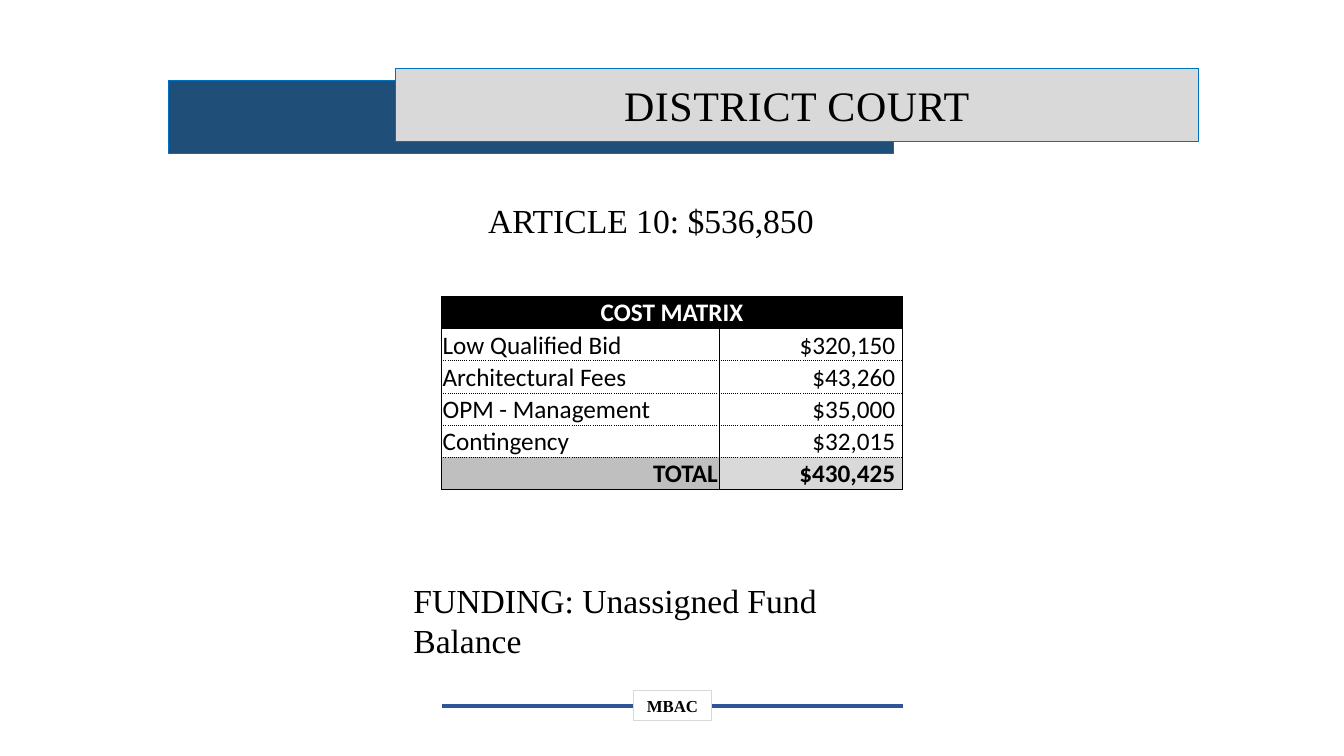
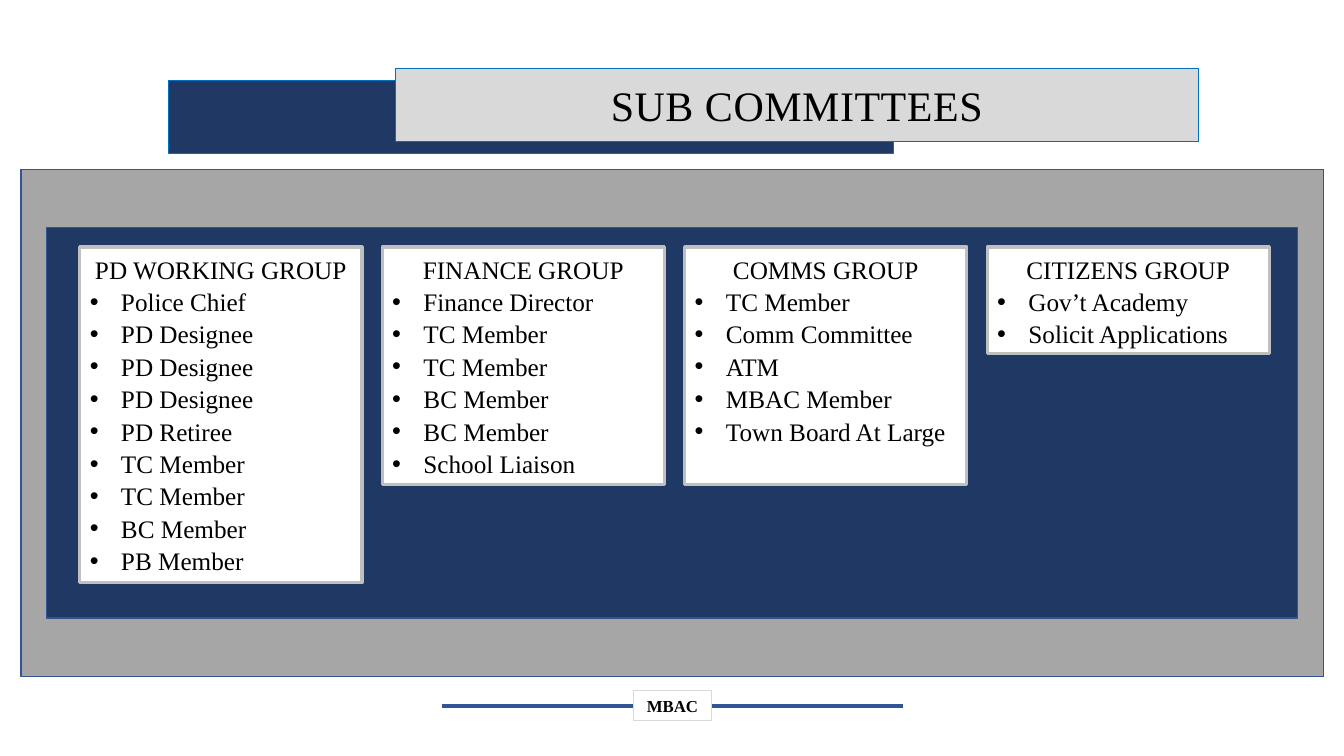
import lxml.etree
import pptx
import pptx.dml.color
import pptx.enum.dml
import pptx.enum.shapes
import pptx.enum.text
import pptx.oxml.ns
import pptx.util

Inches, Pt = pptx.util.Inches, pptx.util.Pt
RGB = pptx.dml.color.RGBColor.from_string
ALIGN = pptx.enum.text.PP_ALIGN
ANCHOR = pptx.enum.text.MSO_ANCHOR
RECTANGLE = pptx.enum.shapes.MSO_SHAPE.RECTANGLE
qn = pptx.oxml.ns.qn


class Theme:
    black, white = "000000", "FFFFFF"
    light_gray, mid_gray, panel_gray = "D9D9D9", "BFBFBF", "A6A6A6"
    steel, navy = "1F4E79", "203864"
    band_line, panel_line, rule = "0070C0", "325491", "2F5597"
    title = {"name": "Times New Roman", "size": Pt(30), "bold": False}
    statement = {"name": "Times New Roman", "size": Pt(24), "bold": False}
    group = {"name": "Times New Roman", "size": Pt(18), "bold": False}
    badge = {"name": "Times New Roman", "size": Pt(12), "bold": True}
    cell = {"name": "Calibri", "size": Pt(18), "bold": False}
    cell_strong = {"name": "Calibri", "size": Pt(18), "bold": True}


def place(shape, at, fill=None, line=None, width=0.75):
    """Put the shape in front of the others at the given inches and paint it."""
    shape.element.getparent().append(shape.element)
    for side, inches in zip(("left", "top", "width", "height"), at):
        setattr(shape, side, Inches(inches))
    shape.shadow.inherit = False
    if fill:
        shape.fill.solid()
        shape.fill.fore_color.rgb = RGB(fill)
        shape.line.color.rgb = RGB(line)
        shape.line.width = Pt(width)
    return shape


def write(frame, lines, font, align=ALIGN.LEFT, color=Theme.black,
          anchor=ANCHOR.TOP, spacing=1.0, bullets=False):
    """Fill the frame; with bullets, every line after the first is a list item."""
    frame.word_wrap = True
    frame.auto_size = pptx.enum.text.MSO_AUTO_SIZE.NONE
    frame.vertical_anchor = anchor
    for number, line in enumerate(lines):
        paragraph = frame.add_paragraph() if number else frame.paragraphs[0]
        is_item = bullets and number > 0
        properties = paragraph._p.get_or_add_pPr()
        indent = Inches(0.31) if is_item else 0
        properties.set("marL", str(indent))
        properties.set("indent", str(-indent))
        if is_item:
            lxml.etree.SubElement(properties, qn("a:buFont")).set("typeface", "Arial")
            lxml.etree.SubElement(properties, qn("a:buChar")).set("char", "•")
        else:
            lxml.etree.SubElement(properties, qn("a:buNone"))
        paragraph.alignment = ALIGN.LEFT if is_item else align
        paragraph.line_spacing = spacing
        paragraph.space_before = Pt(0)
        run = paragraph.add_run()
        run.text = line
        for name, value in font.items():
            setattr(run.font, name, value)
        run.font.color.rgb = RGB(color)


deck = pptx.Presentation()
deck.slide_width, deck.slide_height = Inches(13.33), Inches(7.5)
TWO_CONTENT, COMPARISON = deck.slide_layouts[3], deck.slide_layouts[4]

# Title bands and footer
slides = []
for heading, layout, band_color in (
    ("DISTRICT COURT", TWO_CONTENT, Theme.steel),
    ("SUB COMMITTEES", COMPARISON, Theme.navy),
):
    slide = deck.slides.add_slide(layout)
    slides.append(slide)
    band = slide.shapes.add_shape(RECTANGLE, 0, 0, 0, 0)
    place(band, (1.67, 0.8, 7.19, 0.72), band_color, Theme.band_line)
    title = place(slide.shapes.title, (3.92, 0.68, 7.97, 0.72),
                  Theme.light_gray, Theme.band_line)
    write(title.text_frame, [heading], Theme.title, ALIGN.CENTER, anchor=ANCHOR.MIDDLE)
    title.text_frame.paragraphs[0].runs[0]._r.get_or_add_rPr().set("spc", "40")

    rule = slide.shapes.add_connector(
        pptx.enum.shapes.MSO_CONNECTOR.STRAIGHT,
        Inches(4.38), Inches(7), Inches(8.96), Inches(7))
    rule.line.color.rgb = RGB(Theme.rule)
    rule.line.width = Pt(2.75)
    lxml.etree.SubElement(rule.element.spPr, qn("a:effectLst"))
    badge = slide.shapes.add_shape(RECTANGLE, 0, 0, 0, 0)
    place(badge, (6.28, 6.85, 0.78, 0.3), Theme.white, Theme.light_gray)
    write(badge.text_frame, ["MBAC"], Theme.badge, ALIGN.CENTER)

court, committees = slides

# District court: article, costs and funding
statements = (
    ("ARTICLE 10: $536,850", (4.74, 1.93, 3.86, 0.5)),
    ("FUNDING: Unassigned Fund Balance", (4, 5.7, 5.3, 0.9)),
)
for index, (statement, at) in enumerate(statements, start=1):
    place(court.placeholders[index], at)
    write(court.placeholders[index].text_frame, [statement], Theme.statement)

costs = (
    ("COST MATRIX", ""),
    ("Low Qualified Bid", "$320,150"),
    ("Architectural Fees", "$43,260"),
    ("OPM - Management", "$35,000"),
    ("Contingency", "$32,015"),
    ("TOTAL", "$430,425"),
)
last = len(costs) - 1
ROW_HEIGHT = 0.32
matrix = court.shapes.add_table(
    len(costs), 2, Inches(4.38), Inches(2.94),
    Inches(4.57), Inches(ROW_HEIGHT * len(costs))).table
matrix.first_row = matrix.horz_banding = False
for column, width in zip(matrix.columns, (2.75, 1.82)):
    column.width = Inches(width)
matrix.cell(0, 0).merge(matrix.cell(0, 1))

cell_margins = {"margin_left": 0.01, "margin_top": 0.01, "margin_bottom": 0}
for row, entries in enumerate(costs):
    for column, entry in enumerate(entries):
        cell = matrix.cell(row, column)
        for name, inches in cell_margins.items():
            setattr(cell, name, Inches(inches))
        cell.margin_right = Inches(0.07 if column else 0.01)
        cell.vertical_anchor = ANCHOR.BOTTOM

        borders = {"L": "solid", "R": "solid",
                   "T": "solid" if row == 0 else "sysDot",
                   "B": "solid" if row == last else "sysDot"}
        for side, dash in borders.items():
            border = lxml.etree.SubElement(
                cell._tc.get_or_add_tcPr(), qn("a:ln" + side), w=str(Pt(0.5)))
            ink = lxml.etree.SubElement(border, qn("a:solidFill"))
            lxml.etree.SubElement(ink, qn("a:srgbClr"), val=Theme.black)
            lxml.etree.SubElement(border, qn("a:prstDash"), val=dash)

        if row in (0, last):
            total_fill = Theme.light_gray if column else Theme.mid_gray
            cell.fill.solid()
            cell.fill.fore_color.rgb = RGB(total_fill if row else Theme.black)
        else:
            cell.fill.background()

        if entry:
            align = ALIGN.RIGHT if column or row == last else ALIGN.LEFT
            write(cell.text_frame, [entry],
                  Theme.cell_strong if row in (0, last) else Theme.cell,
                  align if row else ALIGN.CENTER,
                  Theme.black if row else Theme.white, ANCHOR.BOTTOM)

# Sub committees: one card per group on a framed panel
for at, fill in (
    ((0.21, 1.68, 12.92, 5.03), Theme.panel_gray),
    ((0.46, 2.26, 12.41, 3.87), Theme.navy),
):
    panel = committees.shapes.add_shape(RECTANGLE, 0, 0, 0, 0)
    place(panel, at, fill, Theme.panel_line, 1)

groups = (
    (3.33, ["PD WORKING GROUP", "Police Chief", "PD Designee", "PD Designee",
            "PD Designee", "PD Retiree", "TC Member", "TC Member", "BC Member",
            "PB Member"]),
    (2.36, ["FINANCE GROUP", "Finance Director", "TC Member", "TC Member",
            "BC Member", "BC Member", "School Liaison"]),
    (2.36, ["COMMS GROUP", "TC Member", "Comm Committee", "ATM", "MBAC Member",
            "Town Board At Large"]),
    (1.06, ["CITIZENS GROUP", "Gov’t Academy", "Solicit Applications"]),
)
CARD_WIDTH, CARD_GAP = 2.8, 0.2
for index, (height, members) in enumerate(groups):
    card = committees.placeholders[index + 1]
    left = 0.79 + index * (CARD_WIDTH + CARD_GAP)
    place(card, (left, 2.45, CARD_WIDTH, height), Theme.white, Theme.mid_gray, 2.25)
    write(card.text_frame, members, Theme.group, ALIGN.CENTER,
          spacing=1.07, bullets=True)

deck.save("out.pptx")
